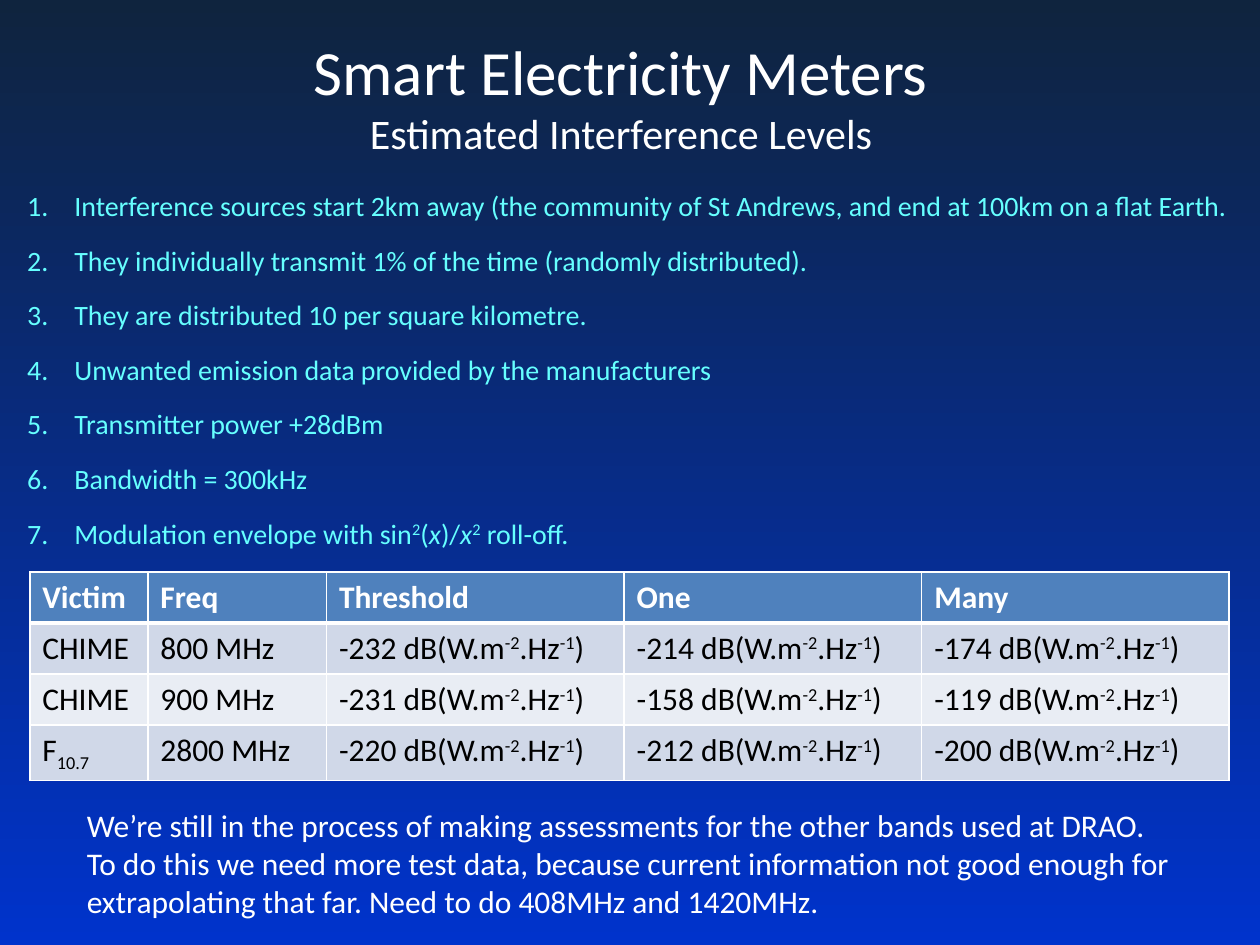
from dataclasses import dataclass

from lxml import etree
from pptx import Presentation
from pptx.dml.color import RGBColor
from pptx.enum.text import MSO_ANCHOR, PP_ALIGN
from pptx.oxml.ns import qn
from pptx.util import Cm, Pt

CENTER = PP_ALIGN.CENTER
MIDDLE = MSO_ANCHOR.MIDDLE
TITLE_ONLY = 5
BASELINES = {"super": "30000", "sub": "-25000"}


@dataclass(frozen=True)
class Theme:
    font: str = "Calibri"
    white: str = "FFFFFF"
    black: str = "000000"
    list_text: str = "66FFFF"
    background: tuple = ("0F243E", "0033CC")
    header_fill: str = "4F81BD"
    row_fills: tuple = ("D0D8E8", "E9EDF4")
    title_size: int = 36
    subtitle_size: int = 24
    list_size: int = 16
    body_size: int = 18
    line_width: int = 1
    header_line_width: int = 3


THEME = Theme()

ASSUMPTIONS = [
    ["Interference sources start 2km away (the community of St Andrews, "
     "and end at 100km on a flat Earth."],
    ["They individually transmit 1% of the time (randomly distributed)."],
    ["They are distributed 10 per square kilometre."],
    ["Unwanted emission data provided by the manufacturers"],
    ["Transmitter power +28dBm"],
    ["Bandwidth = 300kHz"],
    ["Modulation envelope with sin", ("2", "super"), "(", ("x", "italic"), ")/",
     ("x", "italic"), ("2", "super"), " roll-off."],
]
HEADERS = ["Victim", "Freq", "Threshold", "One", "Many"]
VICTIMS = [
    (["CHIME"], 800, (-232, -214, -174)),
    (["CHIME"], 900, (-231, -158, -119)),
    (["F", ("10.7", "sub")], 2800, (-220, -212, -200)),
]
COLUMN_WIDTHS = [2.38, 3.6, 6, 6, 6.2]
NOTE = ("We’re still in the process of making assessments for the other bands used at DRAO. "
        "To do this we need more test data, because current information not good enough for "
        "extrapolating that far. Need to do 408MHz and 1420MHz.")


def format_run(run, size, color, bold=False):
    run.font.name = THEME.font
    run.font.size = Pt(size)
    run.font.bold = bold
    run.font.color.rgb = RGBColor.from_string(color)


def write_pieces(paragraph, pieces, size, color, bold=False):
    """Add one run per piece; a piece is a string or a (string, style) pair."""
    for piece in pieces:
        text, style = (piece, None) if isinstance(piece, str) else piece
        run = paragraph.add_run()
        run.text = text
        format_run(run, size, color, bold)
        if style == "italic":
            run.font.italic = True
        elif style:
            run.font._element.set("baseline", BASELINES[style])


def level(value):
    return [f"{value} dB(W.m", ("-2", "super"), ".Hz", ("-1", "super"), ")"]


def place(shape, box):
    shape.left, shape.top, shape.width, shape.height = map(Cm, box)


def paint_background(slide):
    fill = slide.background.fill
    fill.gradient()
    fill.gradient_angle = 270
    for stop, position, color in zip(fill.gradient_stops, (0, 1), THEME.background):
        stop.position = position
        stop.color.rgb = RGBColor.from_string(color)


def fill_title(slide, box):
    title = slide.shapes.title
    place(title, box)
    title.text_frame.text = "Smart Electricity Meters\vEstimated Interference Levels"
    title.text_frame.vertical_anchor = MIDDLE
    paragraph = title.text_frame.paragraphs[0]
    paragraph.alignment = CENTER
    for run, size in zip(paragraph.runs, (THEME.title_size, THEME.subtitle_size)):
        format_run(run, size, THEME.white)
    line_break = paragraph._p.find(qn("a:br"))
    etree.SubElement(line_break, qn("a:rPr"), sz=str(THEME.title_size * 100))


def add_text_area(slide, box):
    text_frame = slide.shapes.add_textbox(*map(Cm, box)).text_frame
    text_frame.word_wrap = True
    return text_frame


def add_numbered_list(slide, box):
    text_frame = add_text_area(slide, box)
    indent = Cm(0.95)
    for index, pieces in enumerate(ASSUMPTIONS):
        paragraph = text_frame.add_paragraph() if index else text_frame.paragraphs[0]
        paragraph.space_after = Pt(12)
        properties = paragraph._p.get_or_add_pPr()
        properties.set("marL", str(indent))
        properties.set("indent", str(-indent))
        etree.SubElement(properties, qn("a:buFont"), typeface="+mj-lt")
        etree.SubElement(properties, qn("a:buAutoNum"), type="arabicPeriod")
        write_pieces(paragraph, pieces, THEME.list_size, THEME.list_text)


def set_borders(cell, top, bottom):
    widths = {"L": THEME.line_width, "R": THEME.line_width, "T": top, "B": bottom}
    properties = cell._tc.get_or_add_tcPr()
    for index, (side, width) in enumerate(widths.items()):
        line = etree.Element(qn(f"a:ln{side}"), w=str(Pt(width)))
        solid = etree.SubElement(line, qn("a:solidFill"))
        etree.SubElement(solid, qn("a:srgbClr"), val=THEME.white)
        properties.insert(index, line)


def add_levels_table(slide, box):
    rows = [[[header] for header in HEADERS]]
    rows += [[victim, [f"{frequency} MHz"], *map(level, values)]
             for victim, frequency, values in VICTIMS]
    table = slide.shapes.add_table(len(rows), len(HEADERS), *map(Cm, box)).table
    for column, width in zip(table.columns, COLUMN_WIDTHS):
        column.width = Cm(width)
    for row_index, row in enumerate(rows):
        is_header = row_index == 0
        fill = THEME.header_fill if is_header else THEME.row_fills[(row_index - 1) % 2]
        color = THEME.white if is_header else THEME.black
        top = THEME.header_line_width if row_index == 1 else THEME.line_width
        bottom = THEME.header_line_width if is_header else THEME.line_width
        for column_index, pieces in enumerate(row):
            cell = table.cell(row_index, column_index)
            cell.fill.solid()
            cell.fill.fore_color.rgb = RGBColor.from_string(fill)
            set_borders(cell, top, bottom)
            write_pieces(cell.text_frame.paragraphs[0], pieces,
                         THEME.body_size, color, bold=is_header)


def add_note(slide, box):
    paragraph = add_text_area(slide, box).paragraphs[0]
    write_pieces(paragraph, [NOTE], THEME.body_size, THEME.white)


def main():
    presentation = Presentation()
    presentation.slide_width, presentation.slide_height = Cm(25.4), Cm(19.05)
    slide = presentation.slides.add_slide(presentation.slide_layouts[TITLE_ONLY])
    paint_background(slide)
    fill_title(slide, (1.09, 0.33, 22.86, 3.18))
    add_levels_table(slide, (0.6, 11.53, sum(COLUMN_WIDTHS), 4.12))
    add_numbered_list(slide, (0.3, 3.68, 24.8, 7.62))
    add_note(slide, (1.5, 16.13, 22.4, 2.57))
    presentation.save("out.pptx")


if __name__ == "__main__":
    main()
